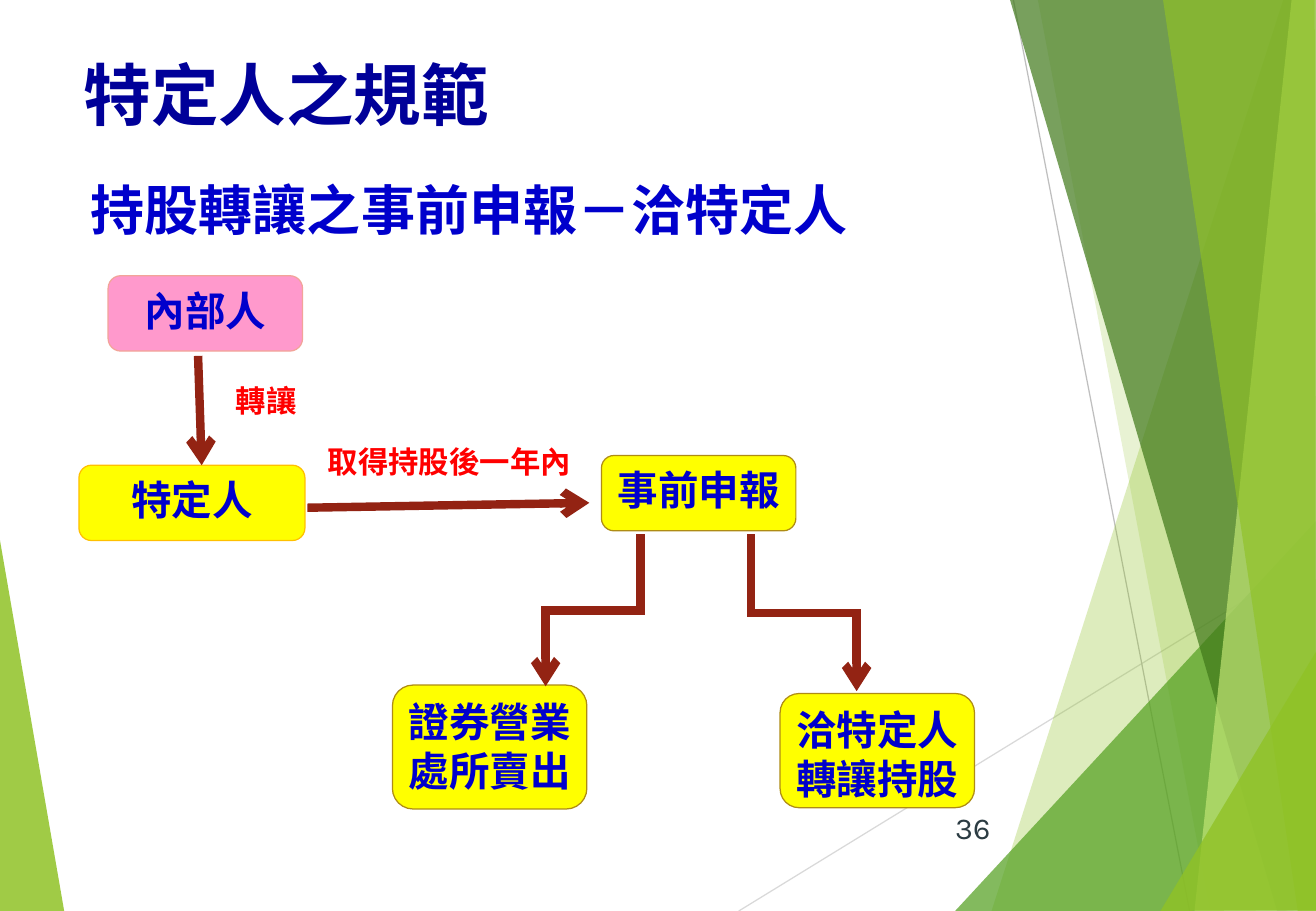
from lxml import etree
from pptx import Presentation
from pptx.dml.color import RGBColor
from pptx.enum.shapes import MSO_CONNECTOR as CONN, MSO_SHAPE as SHAPE
from pptx.enum.text import MSO_ANCHOR as ANCHOR, PP_ALIGN as ALIGN
from pptx.oxml.ns import qn
from pptx.util import Emu, Pt

PX = 9144  # 100 px to the inch
W, H = 1083, 750

CJK, LATIN = "Noto Sans CJK SC", "Karla"
NAVY = RGBColor(0x00, 0x00, 0x99)
BLUE = RGBColor(0x00, 0x00, 0xCC)
RED = RGBColor(0xFF, 0x00, 0x00)
SLATE = RGBColor(0x2C, 0x3C, 0x43)
PINK = RGBColor(0xFF, 0x99, 0xCC)
YELLOW = RGBColor(0xFF, 0xFF, 0x00)
ROSE = RGBColor(0xF2, 0xA4, 0x99)
ORANGE = RGBColor(0xFF, 0xC0, 0x00)
OLIVE = RGBColor(0xAF, 0x8C, 0x14)
BROWN = RGBColor(0x93, 0x23, 0x13)
LIME = RGBColor(0x90, 0xC2, 0x26)
GREEN = RGBColor(0x54, 0xA0, 0x21)
FOREST = RGBColor(0x3F, 0x78, 0x19)
PALE = RGBColor(0xC0, 0xE4, 0x74)
LIGHT_GREY = RGBColor(0xD9, 0xD9, 0xD9)
GREY = RGBColor(0xBF, 0xBF, 0xBF)

# Colour, opacity in percent, corners
FACETS = [
    (LIME, 85, [(-1, 439), (53, 751), (-1, 750)]),
    (LIME, 30, [(1056, 0), (816, 750), (1085, 751), (1084, 0)]),
    (LIME, 20, [(854, -1), (996, 750), (1084, 750), (1084, -1)]),
    (GREEN, 72, [(786, 750), (1083, 429), (1084, 750)]),
    (FOREST, 70, [(831, -1), (1051, 750), (1085, 749), (1085, -1)]),
    (PALE, 70, [(1063, -1), (983, 750), (1085, 750), (1084, -1)]),
    (LIME, 65, [(957, -1), (1068, 750), (1083, 750), (1082, -1)]),
    (LIME, 80, [(955, 750), (1084, 535), (1085, 749)]),
]
RAYS = [(LIGHT_GREY, (608, 750), (1085, 457)), (GREY, (834, 0), (979, 750))]

# Box, fill, outline, lines of text
STEPS = [
    ((89, 227, 160, 62), PINK, ROSE, "內部人"),
    ((65, 383, 186, 62), YELLOW, ORANGE, "特定人"),
    ((495, 375, 160, 62), YELLOW, OLIVE, "事前申報"),
    ((323, 564, 160, 102), YELLOW, OLIVE, "證券營業\n處所賣出"),
    ((642, 571, 160, 94), YELLOW, OLIVE, "洽特定人\n轉讓持股"),
]
ARROWS = [((163, 293), (166, 383)), ((253, 418), (485, 414))]
BRANCHES = [((618, 440), (705, 569)), ((527, 440), (449, 565))]


def px(*lengths):
    return [Emu(round(n * PX)) for n in lengths]


def place(shape, box):
    shape.left, shape.top, shape.width, shape.height = px(*box)


def write(shape, text, size, color, font=CJK, align=ALIGN.LEFT, wrap=False,
          anchor=ANCHOR.TOP):
    tf = shape.text_frame
    tf.text = text
    tf.word_wrap = wrap
    tf.vertical_anchor = anchor
    for p in tf.paragraphs:
        p.alignment = align
        p.space_before = Pt(0)
        if font == CJK:
            p.line_spacing = Pt(round(size * 1.2))
        for r in p.runs:
            r.font.name, r.font.size = font, Pt(size)
            r.font.bold = font == CJK
            r.font.color.rgb = color
    for r_pr in shape.element.iter(qn("a:rPr")):
        etree.SubElement(r_pr, qn("a:ea")).set("typeface", font)


def add_text(s, box, *args, **kwargs):
    write(s.shapes.add_textbox(*px(*box)), *args, **kwargs)


def add_line(s, start, end, color, width, kind=CONN.STRAIGHT, arrow=False):
    line = s.shapes.add_connector(kind, *px(*start, *end))
    line.line.color.rgb = color
    line.line.width = Pt(width)
    sp_pr = line.element.spPr
    if arrow:
        ln = sp_pr.find(qn("a:ln"))
        etree.SubElement(ln, qn("a:miter")).set("lim", "800000")
        etree.SubElement(ln, qn("a:tailEnd")).set("type", "arrow")
    etree.SubElement(sp_pr, qn("a:effectLst"))
    return line


def add_branch(s, start, end):
    """Elbow arrow that leaves downwards, crosses halfway and ends downwards."""
    (x1, y1), (x2, y2) = start, end
    cx, cy = (x1 + x2) / 2, (y1 + y2) / 2
    half_w, half_h = (y2 - y1) / 2, abs(x2 - x1) / 2
    line = add_line(s, (cx - half_w, cy - half_h), (cx + half_w, cy + half_h),
                    BROWN, 5, CONN.ELBOW, arrow=True)
    xfrm = line.element.spPr.find(qn("a:xfrm"))
    if x2 > x1:
        xfrm.set("rot", str(270 * 60000))
        xfrm.set("flipH", "1")
    else:
        xfrm.set("rot", str(90 * 60000))


def add_facet(s, color, opacity, corners):
    builder = s.shapes.build_freeform(*corners[0], scale=PX)
    builder.add_line_segments(corners[1:], close=True)
    facet = builder.convert_to_shape()
    facet.shadow.inherit = False
    facet.fill.solid()
    facet.fill.fore_color.rgb = color
    facet.line.fill.background()
    rgb = facet.element.spPr.find(".//" + qn("a:srgbClr"))
    etree.SubElement(rgb, qn("a:alpha")).set("val", str(opacity * 1000))


def add_backdrop(s):
    add_facet(s, *FACETS[0])
    for color, start, end in RAYS:
        add_line(s, start, end, color, 0.75)
    for facet in FACETS[1:]:
        add_facet(s, *facet)


def add_step(s, box, fill, outline, text):
    step = s.shapes.add_shape(SHAPE.ROUNDED_RECTANGLE, *px(*box))
    step.shadow.inherit = False
    step.fill.solid()
    step.fill.fore_color.rgb = fill
    step.line.color.rgb = outline
    step.line.width = Pt(0.75)
    write(step, text, 24, BLUE, align=ALIGN.CENTER)


def add_headings(s):
    title = s.shapes.title
    s.shapes.element.append(title.element)  # in front of the backdrop
    place(title, (59, 39, 1032, 144))
    write(title, "特定人之規範", 40, NAVY, wrap=True)
    add_text(s, (65, 141, 866, 74), "持股轉讓之事前申報－洽特定人", 32, BLUE, wrap=True)


def add_flow(s):
    for step in STEPS:
        add_step(s, *step)
    for start, end in ARROWS:
        add_line(s, start, end, BROWN, 5, arrow=True)
    for start, end in BRANCHES:
        add_branch(s, start, end)
    add_text(s, (174, 309, 90, 39), "轉讓", 18, RED, align=ALIGN.CENTER)
    add_text(s, (260, 359, 230, 34), "取得持股後一年內", 18, RED)


def main():
    prs = Presentation()
    prs.slide_width, prs.slide_height = px(W, H)
    s = prs.slides.add_slide(prs.slide_layouts[5])
    add_backdrop(s)
    add_headings(s)
    add_flow(s)
    add_text(s, (764, 661, 61, 40), "36", 18, SLATE, LATIN, ALIGN.RIGHT,
             wrap=True, anchor=ANCHOR.MIDDLE)
    prs.save("out.pptx")


if __name__ == "__main__":
    main()
